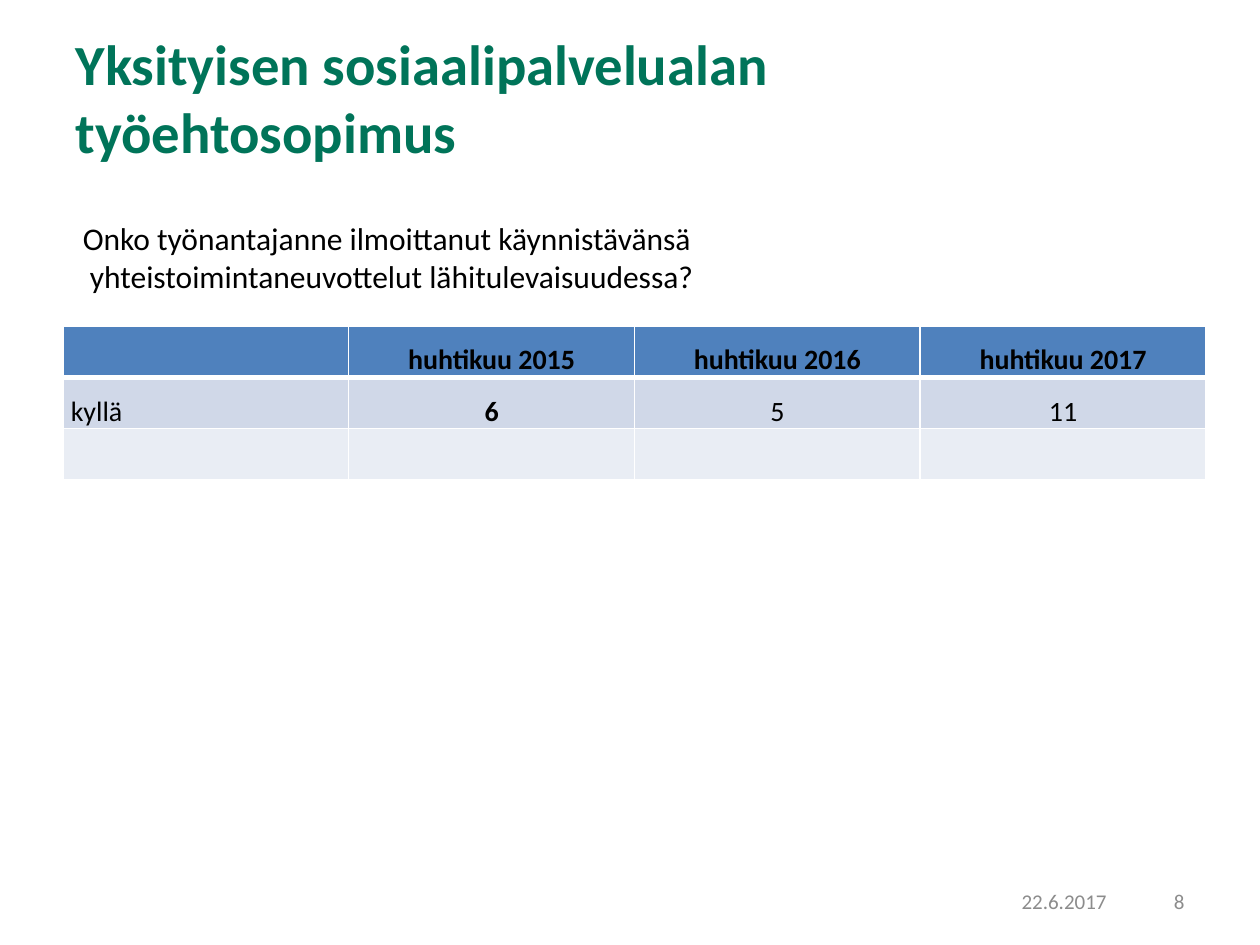
"""Build the slide on the collective agreement survey of private social services."""
from dataclasses import dataclass

from lxml.etree import SubElement
from pptx import Presentation
from pptx.dml.color import RGBColor
from pptx.enum.text import MSO_ANCHOR as Anchor, MSO_AUTO_SIZE as AutoSize, PP_ALIGN as Align
from pptx.oxml.ns import qn
from pptx.util import Cm, Pt


@dataclass(frozen=True)
class Theme:
    font: str = "Calibri"
    title_color: str = "007459"
    text_color: str = "000000"
    footer_color: str = "8C8C8C"
    border_color: str = "FFFFFF"
    row_fills: tuple = ("4F81BD", "D0D8E8", "E9EDF4")
    title_size: float = 32.4
    body_size: float = 18
    table_size: float = 16
    footer_size: float = 12


THEME = Theme()
TITLE = "Yksityisen sosiaalipalvelualan työehtosopimus"
QUESTION = [
    "Onko työnantajanne ilmoittanut käynnistävänsä",
    " yhteistoimintaneuvottelut lähitulevaisuudessa?",
]
ROWS = [
    ["", "huhtikuu 2015", "huhtikuu 2016", "huhtikuu 2017"],
    ["\u00a0kyllä", "6", "5", "11"],
    ["", "", "", ""],
]
BOLD_CELLS = {(0, 1), (0, 2), (0, 3), (1, 1)}
FOOTERS = [
    ("22.6.2017", (16.64, 17.65, 5.92, 1.02)),
    ("8", (22.58, 17.65, 1.55, 1.02)),
]
TITLE_BOX = (1.27, 0.76, 20.22, 2.39)
QUESTION_BOX = (1.42, 4.29, 12.98, 1.8)
TABLE_BOX = (1.27, 6.58, 23.04, 3.09)


def lengths(box):
    return [Cm(value) for value in box]


def format_paragraph(paragraph, size, color, bold=False, align=Align.LEFT):
    paragraph.alignment = align
    font = paragraph.font
    font.name, font.size, font.bold = THEME.font, Pt(size), bold
    font.color.rgb = RGBColor.from_string(color)


def add_text(slide, lines, box, size, color, align=Align.LEFT, anchor=Anchor.TOP, wrap=True):
    frame = slide.shapes.add_textbox(*lengths(box)).text_frame
    frame.word_wrap, frame.vertical_anchor = wrap, anchor
    frame.text = "\n".join(lines)
    for paragraph in frame.paragraphs:
        format_paragraph(paragraph, size, color, align=align)
    return frame


def add_borders(cell, row):
    properties = cell._tc.get_or_add_tcPr()
    widths = {"L": 1, "R": 1, "T": 3 if row == 1 else 1, "B": 3 if row == 0 else 1}
    for side, width in widths.items():
        line = SubElement(properties, qn(f"a:ln{side}"), w=str(Pt(width)))
        fill = SubElement(line, qn("a:solidFill"))
        SubElement(fill, qn("a:srgbClr"), val=THEME.border_color)


def add_title(slide):
    title = slide.shapes.title
    title.left, title.top, title.width, title.height = lengths(TITLE_BOX)
    frame = title.text_frame
    frame.text = TITLE
    frame.auto_size, frame.vertical_anchor = AutoSize.NONE, Anchor.MIDDLE
    format_paragraph(frame.paragraphs[0], THEME.title_size, THEME.title_color, bold=True)


def add_answers(slide):
    table = slide.shapes.add_table(len(ROWS), len(ROWS[0]), *lengths(TABLE_BOX)).table
    for row, texts in enumerate(ROWS):
        for column, text in enumerate(texts):
            cell = table.cell(row, column)
            add_borders(cell, row)
            cell.fill.solid()
            cell.fill.fore_color.rgb = RGBColor.from_string(THEME.row_fills[row])
            cell.vertical_anchor = Anchor.BOTTOM
            cell.margin_left = cell.margin_right = cell.margin_top = Cm(0.03)
            cell.margin_bottom = 0
            cell.text = text
            format_paragraph(
                cell.text_frame.paragraphs[0], THEME.table_size, THEME.text_color,
                bold=(row, column) in BOLD_CELLS,
                align=Align.CENTER if column else Align.LEFT,
            )


def main():
    presentation = Presentation()
    presentation.slide_width, presentation.slide_height = Cm(25.4), Cm(19.05)
    slide = presentation.slides.add_slide(presentation.slide_layouts[5])
    add_title(slide)
    add_answers(slide)
    for text, box in FOOTERS:
        add_text(slide, [text], box, THEME.footer_size, THEME.footer_color, Align.RIGHT, Anchor.MIDDLE)
    question = add_text(slide, QUESTION, QUESTION_BOX, THEME.body_size, THEME.text_color, wrap=False)
    question.auto_size = AutoSize.SHAPE_TO_FIT_TEXT
    presentation.save("out.pptx")


if __name__ == "__main__":
    main()
